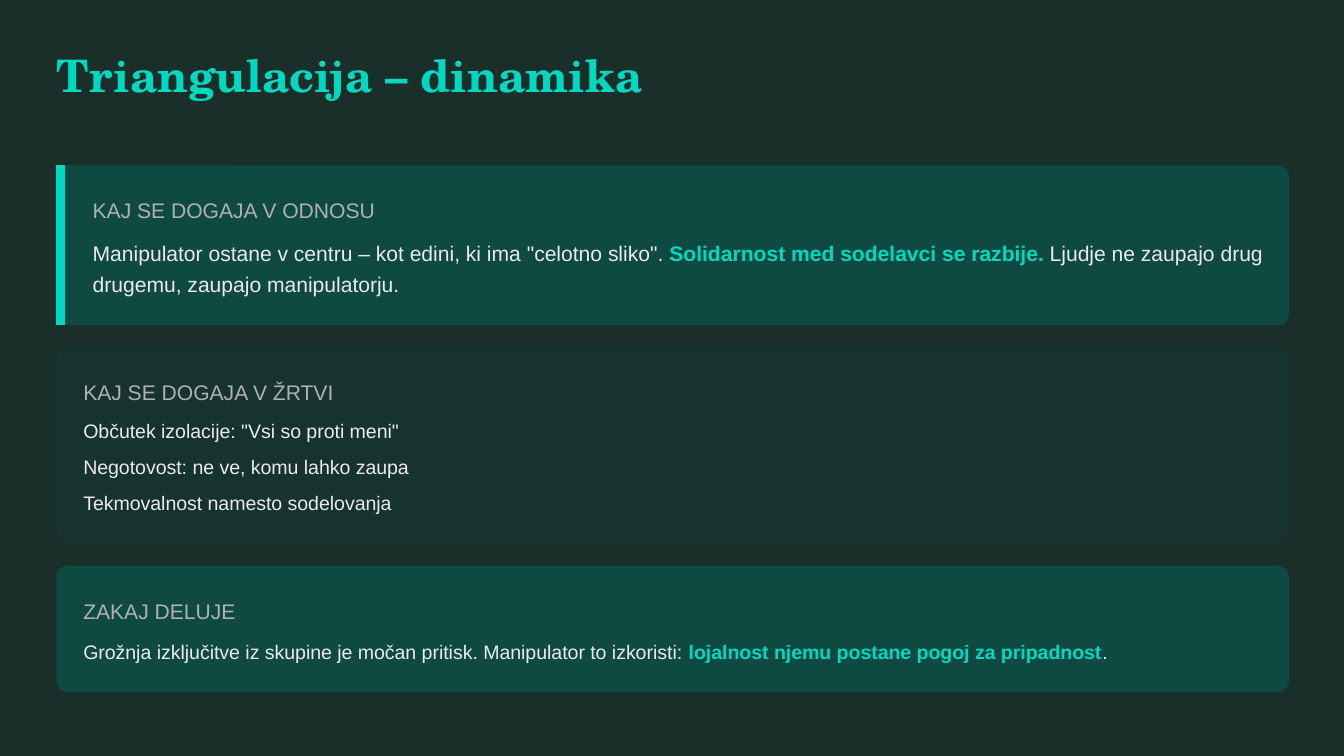
import pptx
import pptx.util
import pptx.dml.color
import pptx.enum.shapes
import pptx.enum.text
from dataclasses import dataclass
from lxml import etree
from pptx.util import Inches


@dataclass(frozen=True)
class Theme:
    back: str = "1A2E2A"
    panel: str = "0F4A42"
    dim: str = "16332E"
    accent: str = "00D9C0"
    muted: str = "B0B0B0"
    text: str = "EAEAEA"
    serif: str = "TeX Gyre Schola"
    sans: str = "Arial"
    title: float = 24
    lead: float = 11.25
    small: float = 10.5


THEME = Theme()
LEFT, WIDTH = 0.42, 9.17
PAD = 0.2
RADIUS = 1 / 12


def color(code):
    return pptx.dml.color.RGBColor.from_string(code)


def paint(fill, code):
    fill.solid()
    fill.fore_color.rgb = color(code)


def place(shape, left, top, width, height):
    shape.left, shape.top = Inches(left), Inches(top)
    shape.width, shape.height = Inches(width), Inches(height)


def frame(shape):
    """Strip margins and autofit; return the text frame."""
    box = shape.text_frame
    box.margin_left = box.margin_right = box.margin_top = box.margin_bottom = 0
    box.word_wrap = True
    box.auto_size = pptx.enum.text.MSO_AUTO_SIZE.NONE
    box.vertical_anchor = pptx.enum.text.MSO_ANCHOR.TOP
    return box


def write(para, runs, size, line, after=0, font=THEME.sans):
    """Fill a paragraph with (text, colour, bold) runs."""
    para.alignment = pptx.enum.text.PP_ALIGN.LEFT
    para.line_spacing = pptx.util.Pt(line)
    para.space_before = pptx.util.Pt(0)
    para.space_after = pptx.util.Pt(after)
    for text, code, bold in runs:
        run = para.add_run()
        run.text = text
        run.font.name = font
        run.font.size = pptx.util.Pt(size)
        run.font.bold = bold
        run.font.color.rgb = color(code)


def add_text(slide, spot, runs, size, line):
    box = slide.shapes.add_textbox(*map(Inches, spot))
    write(frame(box).paragraphs[0], runs, size, line)


def add_card(slide, top, height, fill, head, inset=PAD):
    """Draw a headed card; return left, top and width for its text."""
    card = slide.shapes.add_shape(
        pptx.enum.shapes.MSO_SHAPE.ROUNDED_RECTANGLE,
        *map(Inches, (LEFT, top, WIDTH, height)))
    card.adjustments[0] = RADIUS / height
    card.shadow.inherit = False
    paint(card.fill, fill)
    card.line.fill.background()
    left, width = LEFT + inset, WIDTH - inset - 0.04
    add_text(slide, (left, top + 0.21, width, 0.22),
             [(head, THEME.muted, False)], THEME.lead, 15.8)
    return left, top + 0.51, width


def add_bar(slide, x, top, height):
    bar = slide.shapes.add_connector(
        pptx.enum.shapes.MSO_CONNECTOR.STRAIGHT,
        *map(Inches, (x, top, x, top + height)))
    bar.line.color.rgb = color(THEME.accent)
    bar.line.width = pptx.util.Pt(4.5)
    etree.SubElement(bar.element.spPr, pptx.oxml.ns.qn("a:effectLst"))


def set_title(slide, text):
    title = slide.shapes.title
    place(title, LEFT, 0.42, 4.69, 0.33)
    write(frame(title).paragraphs[0], [(text, THEME.accent, True)],
          THEME.title, 24, font=THEME.serif)


def set_list(slide, spot, items):
    body = slide.placeholders[1]
    place(body, *spot)
    body.element.getparent().append(body.element)  # in front of its card
    box = frame(body)
    for i, item in enumerate(items):
        para = box.add_paragraph() if i else box.paragraphs[0]
        props = para._p.get_or_add_pPr()
        props.set("marL", "0")
        props.set("indent", "0")
        etree.SubElement(props, pptx.oxml.ns.qn("a:buNone"))
        write(para, [(item, THEME.text, False)], THEME.small, 14.7, 4.5)


def main():
    deck = pptx.Presentation()
    deck.slide_width = Inches(10)
    deck.slide_height = deck.slide_width * 9 // 16
    slide = deck.slides.add_slide(deck.slide_layouts[1])
    paint(slide.background.fill, THEME.back)
    set_title(slide, "Triangulacija – dinamika")

    top, height = 1.23, 1.19
    spot = add_card(slide, top, height, THEME.panel,
                    "KAJ SE DOGAJA V ODNOSU", 0.27)
    add_bar(slide, 0.45, top, height)
    add_text(slide, (*spot, 0.47), [
        ('Manipulator ostane v centru – kot edini, ki ima "celotno sliko". ',
         THEME.text, False),
        ("Solidarnost med sodelavci se razbije.", THEME.accent, True),
        (" Ljudje ne zaupajo drug drugemu, zaupajo manipulatorju.",
         THEME.text, False)], THEME.lead, 16.9)

    spot = add_card(slide, 2.58, 1.46, THEME.dim, "KAJ SE DOGAJA V ŽRTVI")
    set_list(slide, (*spot, 0.74), [
        'Občutek izolacije: "Vsi so proti meni"',
        "Negotovost: ne ve, komu lahko zaupa",
        "Tekmovalnost namesto sodelovanja"])

    spot = add_card(slide, 4.21, 0.94, THEME.panel, "ZAKAJ DELUJE")
    add_text(slide, (*spot, 0.22), [
        ("Grožnja izključitve iz skupine je močan pritisk. "
         "Manipulator to izkoristi: ", THEME.text, False),
        ("lojalnost njemu postane pogoj za pripadnost", THEME.accent, True),
        (".", THEME.text, False)], THEME.small, 15.8)

    deck.save("out.pptx")


if __name__ == "__main__":
    main()
